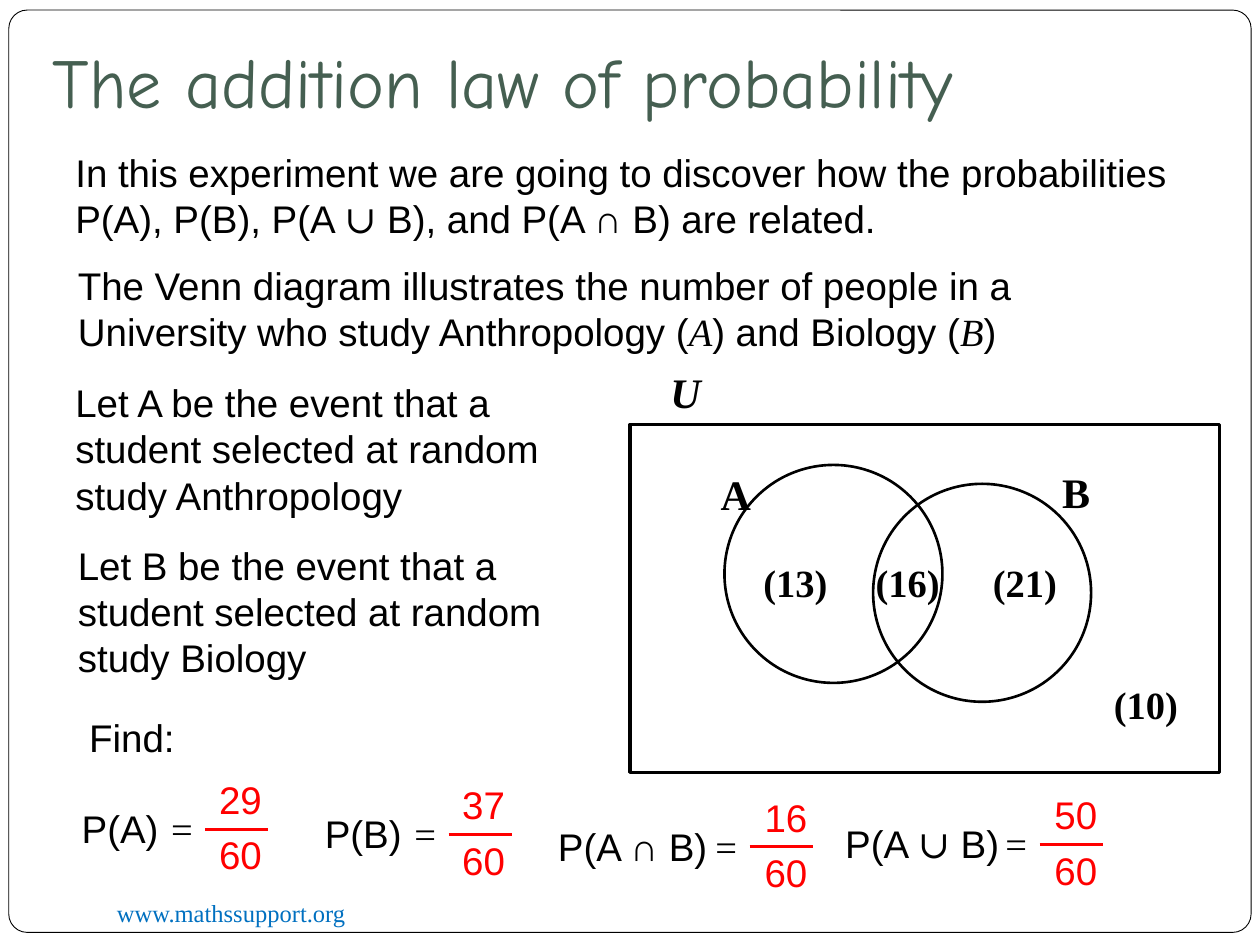
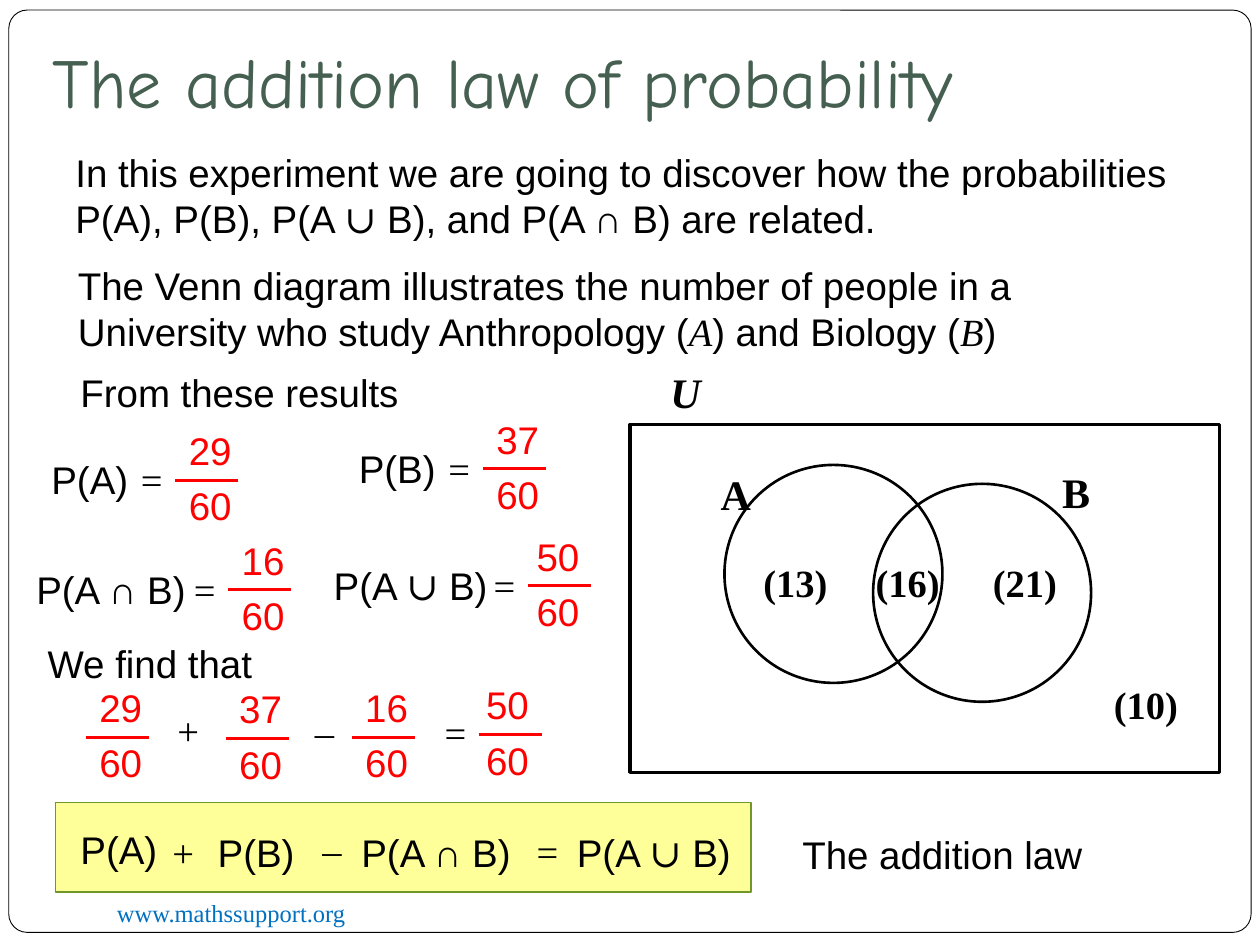
from dataclasses import dataclass
from typing import NamedTuple, Optional

from lxml import etree
from pptx import Presentation
from pptx import util as u
from pptx.dml.color import RGBColor
from pptx.enum import shapes, text
from pptx.oxml import ns

PX = u.Inches(1) // 100

BLACK = RGBColor(0x00, 0x00, 0x00)
WHITE = RGBColor(0xFF, 0xFF, 0xFF)
RED = RGBColor(0xFF, 0x00, 0x00)
TITLE_GREEN = RGBColor(0x45, 0x5F, 0x51)
LINK_BLUE = RGBColor(0x00, 0x70, 0xC0)
LAW_YELLOW = RGBColor(0xFF, 0xFF, 0x99)
LAW_GREEN = RGBColor(0x71, 0x96, 0x29)

SANS = "Arial"
SERIF = "Times New Roman"
SYMBOL = "Cambria"
TITLE_FONT = "Comic Neue"

BAR_WIDTH = 50


class Box(NamedTuple):
    left: int
    top: int
    width: int
    height: int


class Run(NamedTuple):
    text: str
    font: str = SANS
    italic: bool = False


@dataclass(frozen=True)
class Style:
    font: str = SANS
    size: int = 22
    color: RGBColor = BLACK
    bold: bool = False
    italic: bool = False
    side_inset: int = 10


@dataclass(frozen=True)
class TextItem:
    content: str | list[Run]
    box: Box
    style: Style = Style()


@dataclass(frozen=True)
class Term:
    label: str | list[Run]
    width: int
    equals_gap: int
    numerator: str


@dataclass(frozen=True)
class Equation:
    term: Term
    left: int
    bar_top: int
    digit_shift: int = 1


@dataclass(frozen=True)
class Fraction:
    numerator: str
    left: int
    bar_top: int
    digit_shift: int = 1


BODY = Style()
SIGN = Style(font=SERIF)
DIGITS = Style(color=RED)
COUNT = Style(font=SERIF, bold=True, side_inset=0)
SET_NAME = Style(font=SERIF, size=24, bold=True, side_inset=0)
UNIVERSE = Style(font=SERIF, size=24, bold=True, italic=True, side_inset=0)
FOOTER = Style(font=SERIF, size=14, color=LINK_BLUE)
TITLE = Style(font=TITLE_FONT, size=40, color=TITLE_GREEN)

P_A = Term("P(A)", 93, 71, "29")
P_B = Term("P(B)", 93, 71, "37")
P_BOTH = Term("P(A ∩ B)", 140, 125, "16")
P_EITHER = Term([Run("P(A "), Run("∪", SYMBOL), Run(" B)")], 148, 127, "50")

INTRODUCTION = [
    TextItem(
        [
            Run("In this experiment we are going to discover how the probabilities P(A), P(B), P(A "),
            Run("∪", SYMBOL),
            Run(" B), and P(A ∩ B) are related."),
        ],
        Box(50, 113, 900, 84),
    ),
    TextItem(
        [
            Run("The Venn diagram illustrates the number of people in a University who study Anthropology ("),
            Run("A", SERIF, True),
            Run(") and Biology ("),
            Run("B", SERIF, True),
            Run(")"),
        ],
        Box(52, 203, 872, 84),
    ),
]

VENN_LABELS = [
    TextItem("(13)", Box(606, 439, 63, 47), COUNT),
    TextItem("(16)", Box(695, 439, 63, 47), COUNT),
    TextItem("(21)", Box(788, 439, 63, 47), COUNT),
    TextItem("(10)", Box(884, 536, 63, 47), COUNT),
    TextItem("A", Box(572, 367, 55, 50), SET_NAME),
    TextItem("B", Box(843, 365, 55, 50), SET_NAME),
    TextItem("U", Box(532, 286, 55, 40), UNIVERSE),
]

EVENTS = [
    TextItem("Let A be the event that a student selected at random study Anthropology", Box(50, 296, 426, 121)),
    TextItem("Let B be the event that a student selected at random study Biology", Box(52, 425, 426, 121)),
    TextItem("Find:", Box(61, 562, 127, 47)),
]

FIND_EQUATIONS = [
    Equation(P_A, 55, 658),
    Equation(P_B, 248, 662),
    Equation(P_BOTH, 433, 672, 2),
    Equation(P_EITHER, 661, 670, 2),
]

RESULT_EQUATIONS = [
    Equation(P_A, 31, 381),
    Equation(P_B, 275, 372),
    Equation(P_BOTH, 19, 468),
    Equation(P_EITHER, 255, 465, -3),
]

SUM_FRACTIONS = [
    Fraction("29", 68, 585),
    Fraction("37", 179, 586),
    Fraction("16", 279, 585),
    Fraction("50", 380, 583, -4),
]

CONCLUSIONS = [
    TextItem("From these results", Box(54, 288, 426, 47)),
    TextItem("We find that", Box(28, 503, 228, 47)),
    TextItem("The addition law", Box(627, 655, 256, 47)),
]

SIGNS = [
    TextItem(sign, Box(left, top, 29, 47), SIGN)
    for sign, left, top in [
        ("+", 131, 556), ("–", 240, 557), ("=", 343, 558),
        ("+", 127, 653), ("–", 246, 651), ("=", 416, 652),
    ]
]

LAW_TERMS = [
    TextItem(term.label, Box(left, top, term.width, 47))
    for term, left, top in [(P_A, 54, 651), (P_B, 163, 653), (P_BOTH, 277, 653), (P_EITHER, 448, 653)]
]


def emu(box: Box) -> list[int]:
    return [length * PX for length in box]


def write(frame, content: str | list[Run], style: Style) -> None:
    frame.word_wrap = True
    frame.margin_left = frame.margin_right = style.side_inset * PX
    frame.margin_top = frame.margin_bottom = 5 * PX
    paragraph = frame.paragraphs[0]
    paragraph.alignment = text.PP_ALIGN.LEFT
    font = paragraph.font
    font.size = u.Pt(style.size)
    font.bold = style.bold
    font.color.rgb = style.color
    if isinstance(content, str):
        font.name = style.font
        font.italic = style.italic
        paragraph.add_run().text = content
        return
    for part in content:
        run = paragraph.add_run()
        run.text = part.text
        run.font.name = part.font
        run.font.italic = part.italic


def add_text(slide, item: TextItem):
    shape = slide.shapes.add_textbox(*emu(item.box))
    write(shape.text_frame, item.content, item.style)
    shape.text_frame.auto_size = text.MSO_AUTO_SIZE.SHAPE_TO_FIT_TEXT
    return shape


def add_outline(slide, kind: shapes.MSO_SHAPE, box: Box, weight: float,
                color: RGBColor = BLACK, fill: Optional[RGBColor] = None):
    shape = slide.shapes.add_shape(kind, *emu(box))
    shape.shadow.inherit = False
    if fill is None:
        shape.fill.background()
    else:
        shape.fill.solid()
        shape.fill.fore_color.rgb = fill
    shape.line.color.rgb = color
    shape.line.width = u.Pt(weight)
    return shape


def add_fraction(slide, fraction: Fraction) -> None:
    left, top = fraction.left, fraction.bar_top
    for digits, digit_top in [(fraction.numerator, top - 47), ("60", top - 3)]:
        add_text(slide, TextItem(digits, Box(left + fraction.digit_shift, digit_top, 65, 47), DIGITS))
    bar = slide.shapes.add_connector(
        shapes.MSO_CONNECTOR.STRAIGHT, left * PX, top * PX, (left + BAR_WIDTH) * PX, top * PX
    )
    bar.line.color.rgb = RED
    bar.line.width = u.Pt(1.75)
    etree.SubElement(bar.element.spPr, ns.qn("a:effectLst"))


def add_equation(slide, equation: Equation) -> None:
    term = equation.term
    top = equation.bar_top - 24
    equals_left = equation.left + term.equals_gap
    add_text(slide, TextItem(term.label, Box(equation.left, top, term.width, 47)))
    add_text(slide, TextItem("=", Box(equals_left, top, 29, 47), SIGN))
    add_fraction(slide, Fraction(term.numerator, equals_left + 37, equation.bar_top, equation.digit_shift))


def add_venn_diagram(slide) -> None:
    add_outline(slide, shapes.MSO_SHAPE.RECTANGLE, Box(500, 337, 468, 276), 2)
    for left, top in [(575, 369), (693, 384)]:
        add_outline(slide, shapes.MSO_SHAPE.OVAL, Box(left, top, 173, 173), 1.5)
    for label in VENN_LABELS:
        add_text(slide, label)


def add_base_slide(presentation, layout):
    slide = presentation.slides.add_slide(layout)
    title = slide.shapes.title
    title.left, title.top, title.width, title.height = emu(Box(32, 19, 850, 88))
    frame = title.text_frame
    write(frame, "The addition law of probability", TITLE)
    frame.margin_bottom = 10 * PX
    frame.vertical_anchor = text.MSO_ANCHOR.BOTTOM
    frame.auto_size = text.MSO_AUTO_SIZE.NONE
    for item in INTRODUCTION:
        add_text(slide, item)
    add_venn_diagram(slide)
    return slide


def move_frame_to_layout(slide, layout) -> None:
    border = add_outline(slide, shapes.MSO_SHAPE.ROUNDED_RECTANGLE, Box(7, 8, 986, 732), 0.5, fill=WHITE)
    border.adjustments[0] = 0.02
    footer = add_text(slide, TextItem("www.mathssupport.org", Box(83, 708, 325, 34), FOOTER))
    for shape in (border, footer):
        layout.shapes.element.append(shape.element)


def build_experiment_slide(slide) -> None:
    for item in EVENTS:
        add_text(slide, item)
    for equation in FIND_EQUATIONS:
        add_equation(slide, equation)


def build_law_slide(slide) -> None:
    add_outline(slide, shapes.MSO_SHAPE.RECTANGLE, Box(44, 637, 552, 71), 1, LAW_GREEN, LAW_YELLOW)
    for equation in RESULT_EQUATIONS:
        add_equation(slide, equation)
    for fraction in SUM_FRACTIONS:
        add_fraction(slide, fraction)
    for item in CONCLUSIONS + SIGNS + LAW_TERMS:
        add_text(slide, item)


def main() -> None:
    presentation = Presentation()
    presentation.slide_width = 1000 * PX
    presentation.slide_height = 750 * PX
    layout = presentation.slide_layouts[5]
    experiment = add_base_slide(presentation, layout)
    move_frame_to_layout(experiment, layout)
    build_experiment_slide(experiment)
    build_law_slide(add_base_slide(presentation, layout))
    presentation.save("out.pptx")


if __name__ == "__main__":
    main()
